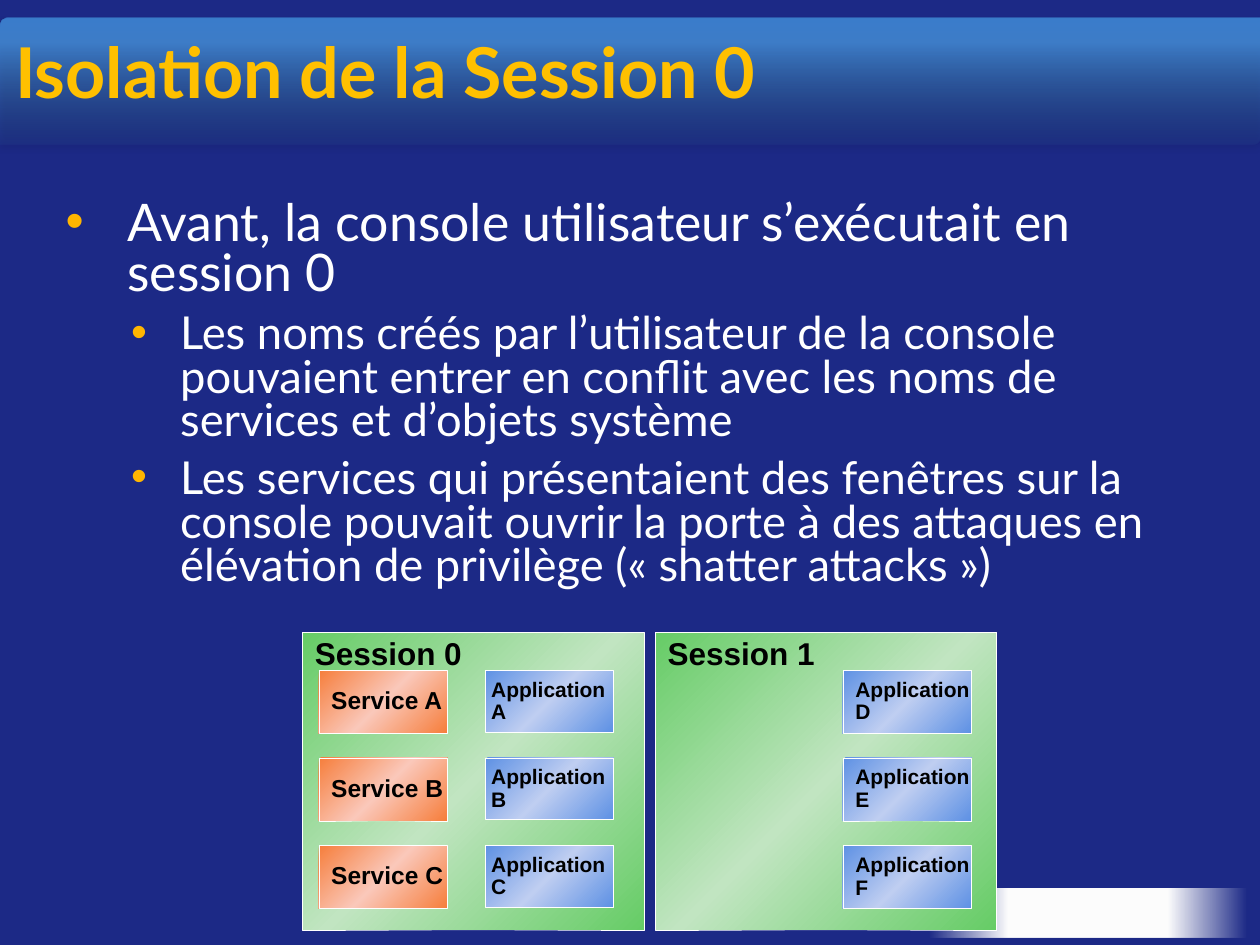
from pptx import Presentation
from pptx.dml.color import RGBColor
from pptx.enum.shapes import MSO_SHAPE as Preset
from pptx.enum.text import MSO_ANCHOR as Anchor, MSO_AUTO_SIZE as AutoSize, PP_ALIGN as Align
from pptx.oxml import parse_xml
from pptx.oxml.ns import nsdecls, qn
from pptx.util import Inches, Pt

NAVY = RGBColor(0x1C, 0x29, 0x86)
GOLD = RGBColor(0xFF, 0xC0, 0x00)
BULLET = RGBColor(0xFF, 0xB6, 0x01)
WHITE = RGBColor(0xFF, 0xFF, 0xFF)
BLACK = RGBColor(0x00, 0x00, 0x00)
NEAR_WHITE = RGBColor(0xFE, 0xFE, 0xFE)
STEEL = RGBColor(0x2F, 0x5F, 0x99)
SKY = RGBColor(0x3D, 0x7C, 0xC7)
AZURE = RGBColor(0x3A, 0x7C, 0xCB)
GREEN = RGBColor(0x66, 0xCC, 0x66)
PALE_GREEN = RGBColor(0xC1, 0xE5, 0xC1)
BLUE = RGBColor(0x5E, 0x91, 0xE4)
PALE_BLUE = RGBColor(0xBF, 0xCE, 0xF1)
ORANGE = RGBColor(0xF6, 0x7E, 0x3C)
PALE_ORANGE = RGBColor(0xFA, 0xC8, 0xBA)

BODY = [
    (0, "Avant, la console utilisateur s’exécutait en session 0"),
    (1, "Les noms créés par l’utilisateur de la console pouvaient entrer en conflit "
        "avec les noms de services et d’objets système"),
    (1, "Les services qui présentaient des fenêtres sur la console pouvait ouvrir la porte "
        "à des attaques en élévation de privilège (« shatter attacks »)"),
]
LEVELS = [(29.6, 0.49, 0.49), (25.9, 0.91, 0.39)]


class SlideBuilder:
    """Holds the style and the current slide, and draws each kind of element."""

    def __init__(self, page):
        self.page = page
        self.heading_font = "Lato"
        self.label_font = "Arial"
        page.background.fill.solid()
        page.background.fill.fore_color.rgb = NAVY

    def place(self, shape, left, top, width, height):
        shape.left, shape.top = Inches(left), Inches(top)
        shape.width, shape.height = Inches(width), Inches(height)
        shape.element.getparent().append(shape.element)

    def format_text(self, para, font, size, color, bold, spacing):
        para.alignment = Align.LEFT
        para.line_spacing = spacing
        para.space_before = Pt(0)
        for span in para.runs:
            span.font.name = font
            span.font.size = Pt(size)
            span.font.bold = bold
            span.font.color.rgb = color

    def gradient(self, shape, stops, angle):
        shape.fill.background()
        marks = "".join(
            f'<a:gs pos="{pos * 1000}"><a:srgbClr val="{color}">'
            f'<a:alpha val="{alpha * 1000}"/></a:srgbClr></a:gs>'
            for pos, color, alpha in stops)
        fill = parse_xml(
            f'<a:gradFill {nsdecls("a")} rotWithShape="1"><a:gsLst>{marks}</a:gsLst>'
            f'<a:lin ang="{angle * 60000}" scaled="0"/></a:gradFill>')
        properties = shape.element.spPr
        properties.replace(properties.find(qn("a:noFill")), fill)

    def panel(self, preset, left, top, width, height, stops, angle):
        shape = self.page.shapes.add_shape(
            preset, Inches(left), Inches(top), Inches(width), Inches(height))
        shape.shadow.inherit = False
        shape.line.fill.background()
        self.gradient(shape, stops, angle)
        return shape

    def header(self):
        band = self.panel(Preset.ROUND_2_DIAG_RECTANGLE, 0, 0.14, 10, 1.01,
                          [(0, STEEL, 13), (80, SKY, 100), (100, AZURE, 100)], 270)
        band.adjustments[0] = 0.07
        band.adjustments[1] = 0
        band.element.spPr.find(qn("a:effectLst")).append(parse_xml(
            f'<a:outerShdw {nsdecls("a")} blurRad="{Pt(3.1)}" dist="{Pt(1.8)}" dir="5400000">'
            f'<a:srgbClr val="{BLACK}"><a:alpha val="35000"/></a:srgbClr></a:outerShdw>'))

    def title(self, text):
        box = self.page.shapes.title
        self.place(box, 0.02, 0.25, 9.16, 0.71)
        frame = box.text_frame
        frame.text = text
        frame.auto_size = AutoSize.NONE
        frame.vertical_anchor = Anchor.MIDDLE
        self.format_text(frame.paragraphs[0], self.heading_font, 40, GOLD, True, 0.9)

    def body(self, items):
        box = self.page.placeholders[1]
        self.place(box, 0.42, 1.55, 9.2, 3.37)
        frame = box.text_frame
        frame.text = "\n".join(text for level, text in items)
        frame.auto_size = AutoSize.NONE
        for index, (para, (level, text)) in enumerate(zip(frame.paragraphs, items)):
            size, margin, hanging = LEVELS[level]
            para.level = level
            self.format_text(para, self.heading_font, size, WHITE, False, 0.8)
            if index:
                para.space_before = Pt(8)
            properties = para._p.get_or_add_pPr()
            properties.set("marL", str(Inches(margin)))
            properties.set("indent", str(-Inches(hanging)))
            for mark in (f'<a:buClr {nsdecls("a")}><a:srgbClr val="{BULLET}"/></a:buClr>',
                         f'<a:buFont {nsdecls("a")} typeface="Arial"/>',
                         f'<a:buChar {nsdecls("a")} char="•"/>'):
                properties.append(parse_xml(mark))

    def label(self, shape, text, size, anchor):
        frame = shape.text_frame
        frame.text = text
        frame.word_wrap = False
        frame.vertical_anchor = anchor
        self.format_text(frame.paragraphs[0], self.label_font, size, BLACK, True, 0.9)

    def block(self, left, top, width, height, edge, middle):
        shape = self.panel(Preset.RECTANGLE, left, top, width, height,
                           [(0, edge, 100), (50, middle, 100), (100, edge, 100)], 45)
        shape.line.color.rgb = WHITE
        shape.line.width = Pt(0.25)
        return shape

    def session(self, left, name):
        shape = self.block(left, 5.02, 2.71, 2.36, GREEN, PALE_GREEN)
        self.label(shape, name, 18, Anchor.TOP)

    def caption(self, left, top, text):
        box = self.page.shapes.add_textbox(
            Inches(left), Inches(top), Inches(1.11), Inches(0.46))
        self.label(box, text, 12, Anchor.TOP)


def main():
    deck = Presentation()
    deck.slide_width, deck.slide_height = Inches(10), Inches(7.5)
    slide = SlideBuilder(deck.slides.add_slide(deck.slide_layouts[1]))

    slide.header()
    slide.panel(Preset.RECTANGLE, 7.38, 7.05, 2.51, 0.39,
                [(0, WHITE, 0), (25, NEAR_WHITE, 100), (75, NEAR_WHITE, 100), (100, WHITE, 0)], 0)
    slide.title("Isolation de la Session 0")
    slide.body(BODY)

    slide.session(5.2, "Session 1")
    slide.session(2.4, "Session 0")
    for row, (service, local, remote) in enumerate(zip("ABC", "ABC", "DEF")):
        top = 5.32 + row * 0.695
        block = slide.block(6.69, top, 1.02, 0.5, BLUE, PALE_BLUE)
        slide.label(block, f"Application\v{remote}", 12, Anchor.MIDDLE)
        block = slide.block(2.53, top, 1.02, 0.5, ORANGE, PALE_ORANGE)
        slide.label(block, f"Service {service}", 14, Anchor.MIDDLE)
        slide.block(3.85, top, 1.02, 0.49, BLUE, PALE_BLUE)
        slide.caption(3.8, top + 0.02, f"Application\v{local}")

    deck.save("out.pptx")


if __name__ == "__main__":
    main()
